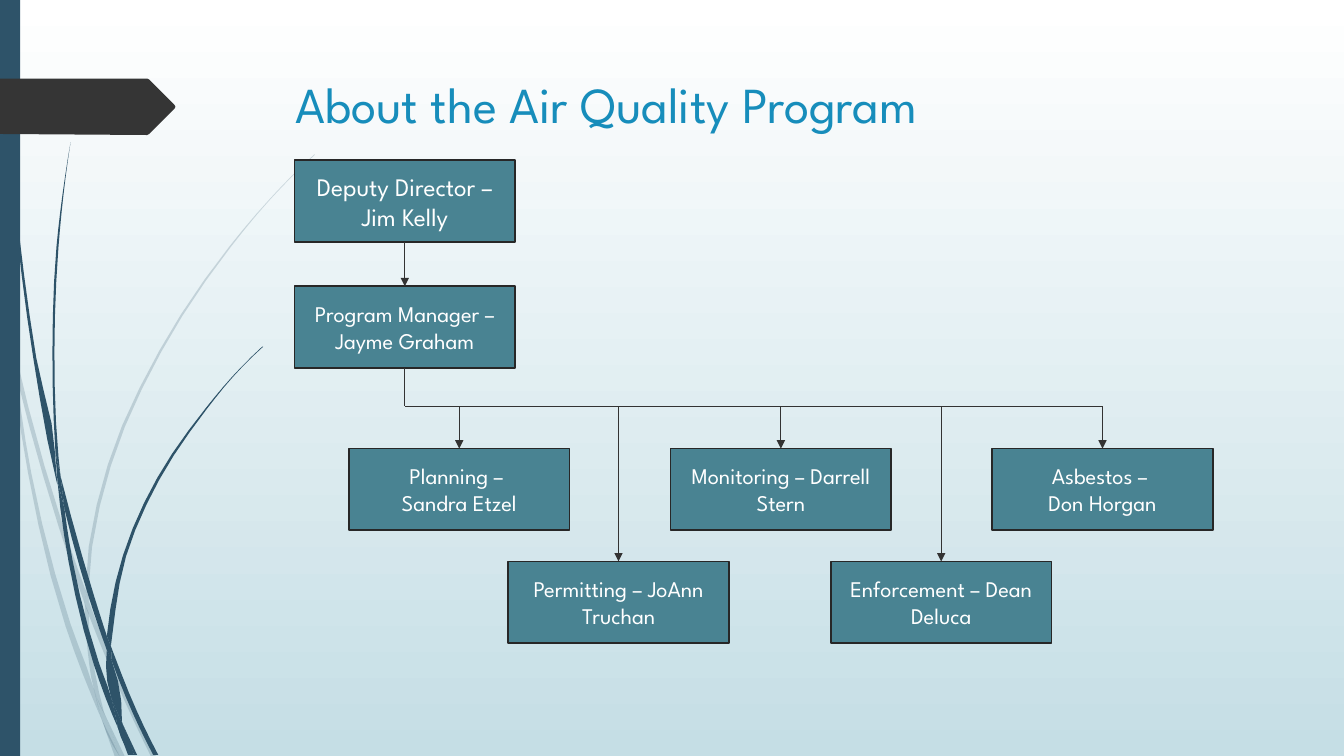
from math import dist

from lxml import etree
from pptx import Presentation
from pptx.dml.color import RGBColor
from pptx.enum.shapes import MSO_CONNECTOR, MSO_SHAPE
from pptx.enum.text import MSO_ANCHOR, PP_ALIGN
from pptx.oxml.ns import qn
from pptx.util import Inches, Pt

RECTANGLE = MSO_SHAPE.RECTANGLE
STRAIGHT = MSO_CONNECTOR.STRAIGHT
LEFT, CENTER = PP_ALIGN.LEFT, PP_ALIGN.CENTER
TOP, MIDDLE = MSO_ANCHOR.TOP, MSO_ANCHOR.MIDDLE
BOTTOM_SIDE, TOP_SIDE = 2, 0

FONT = "League Spartan"
NAVY, TEAL, BLUE = "2E5369", "498392", "178DBB"
CHARCOAL, OUTLINE, ARROW, WHITE = "353535", "272727", "333333", "FFFFFF"


def color(value):
    return RGBColor.from_string(value)


def write(shape, text, size=16, fill=WHITE, align=CENTER, anchor=MIDDLE):
    """Each line of the text becomes a paragraph."""
    frame = shape.text_frame
    frame.word_wrap = True
    frame.vertical_anchor = anchor
    for i, line in enumerate(text.split("\n")):
        paragraph = frame.add_paragraph() if i else frame.paragraphs[0]
        paragraph.alignment = align
        run = paragraph.add_run()
        run.text = line
        run.font.name = FONT
        run.font.size = Pt(size)
        run.font.color.rgb = color(fill)


def parabola(a, b, c, t):
    """Point at distance t from b on the parabola through a, b and c."""
    u, w = -dist(a, b), dist(b, c)
    return [p * t * (t - w) / (u * (u - w)) + q * (t - u) * (t - w) / (u * w)
            + r * t * (t - u) / (w * (w - u)) for p, q, r in zip(a, b, c)]


def smooth_curve(knots, steps=3):
    """Blend the parabolas on both sides of every stretch between knots."""
    if len(knots) < 3:
        return knots
    points = []
    last = len(knots) - 2
    for i, (start, end) in enumerate(zip(knots, knots[1:])):
        length = dist(start, end)
        for step in range(steps):
            share = step / steps
            t = share * length
            before = parabola(*knots[i - 1:i + 2], t) if i else None
            after = parabola(*knots[i:i + 3], t - length) if i < last else before
            before = before or after
            points.append([p + (q - p) * share for p, q in zip(before, after)])
    return points + [knots[-1]]


class OrgSlide:
    def __init__(self, slide):
        self.slide = slide
        self.shapes = slide.shapes

    def background(self, start, end):
        fill = self.slide.background.fill
        fill.gradient()
        fill.gradient_angle = 270
        for stop, position, value in zip(fill.gradient_stops, (0, 1), (start, end)):
            stop.position = position
            stop.color.rgb = color(value)

    def paint(self, shape, fill, line=None, opacity=100):
        shape.shadow.inherit = False
        shape.fill.solid()
        shape.fill.fore_color.rgb = color(fill)
        if opacity < 100:
            rgb = next(shape.element.spPr.iter(qn("a:srgbClr")))
            etree.SubElement(rgb, qn("a:alpha"), val=str(opacity * 1000))
        if line:
            shape.line.color.rgb = color(line)
            shape.line.width = Pt(1.25)
        else:
            shape.line.fill.background()
        return shape

    def rectangle(self, x, y, width, height, fill, line=None):
        shape = self.shapes.add_shape(
            RECTANGLE, Inches(x), Inches(y), Inches(width), Inches(height))
        return self.paint(shape, fill, line)

    def outline(self, points, fill, opacity=100):
        start, *rest = [(Inches(x), Inches(y)) for x, y in points]
        builder = self.shapes.build_freeform(*start)
        builder.add_line_segments(rest, close=True)
        return self.paint(builder.convert_to_shape(), fill, opacity=opacity)

    def title(self, text):
        box = self.shapes.add_textbox(
            Inches(2.83), Inches(0.68), Inches(9.75), Inches(1.4))
        write(box, text, size=36, fill=BLUE, align=LEFT, anchor=TOP)

    def role(self, x, y, text, size=16):
        box = self.rectangle(x, y, BOX_WIDTH, BOX_HEIGHT, TEAL, OUTLINE)
        write(box, text, size=size)
        return box

    def connector(self, start, end, source=None, target=None, arrow=True):
        line = self.shapes.add_connector(STRAIGHT, *(Inches(v) for v in start + end))
        if source:
            line.begin_connect(source, BOTTOM_SIDE)
        if target:
            line.end_connect(target, TOP_SIDE)
        line.line.color.rgb = color(ARROW)
        line.line.width = Pt(0.75)
        if arrow:
            etree.SubElement(line.line._get_or_add_ln(), qn("a:tailEnd"), type="triangle")
        etree.SubElement(line.element.spPr, qn("a:effectLst"))


# Grass blades in sections: one edge out, the other edge back
FAINT_BLADES = [
    ([(0, 2.82), (0.09, 3.22), (0.11, 3.5)], [(0.1, 3.44), (0, 2.99)]),
    ([(0.14, 3.45), (0.62, 5.2), (0.85, 5.86)], [(0.84, 5.99), (0.58, 5.22), (0.17, 3.76)]),
    ([(0.88, 5.96), (0.92, 6.07), (1.27, 6.92), (1.55, 7.51)],
     [(1.5, 7.51), (1.23, 6.94), (0.88, 6.1)]),
    ([(1.05, 7.11), (1.24, 7.51)], [(1.19, 7.51)]),
    ([(0.11, 3.5), (0.28, 4.7), (0.65, 6.21), (0.92, 6.93), (1.01, 7.14)],
     [(0.99, 7.07), (0.93, 6.83), (0.7, 6.19), (0.31, 4.69), (0.17, 3.76)]),
    ([(0.84, 5.99), (0.87, 6.46), (0.93, 6.83), (0.96, 6.92), (1.05, 7.11)],
     [(1.03, 7.06), (0.91, 6.46), (0.88, 6.1), (0.88, 6.08)]),
    ([(3.12, 1.53), (2.89, 1.75), (2.68, 1.97), (2.28, 2.44), (1.58, 3.48),
      (1.07, 4.61), (0.85, 5.84), (0.85, 5.86)],
     [(0.88, 5.96), (0.88, 5.84), (1.1, 4.62), (1.6, 3.49), (2.29, 2.45),
      (2.68, 1.98), (2.9, 1.75), (3.12, 1.54)]),
    ([(1.01, 7.14), (1.14, 7.51)], [(1.19, 7.51)]),
    ([(0.85, 5.86), (0.88, 5.96)], [(0.88, 6.1), (0.84, 5.99)]),
    ([(0.93, 6.83), (0.99, 7.07), (1.01, 7.14), (1.19, 7.51)], [(1.05, 7.11), (0.96, 6.92)]),
]
DARK_BLADES = [
    ([(0.03, 0), (0.04, 0.48), (0.07, 1.1), (0.17, 2.33), (0.33, 3.55),
      (0.56, 4.77), (0.57, 4.81)],
     [(0.55, 4.57), (0.55, 4.53), (0.36, 3.55), (0.19, 2.32), (0.08, 1.09),
      (0.05, 0.48), (0.04, 0)]),
    ([(0.6, 4.72), (0.93, 5.9), (1.06, 6.31)], [(1.06, 6.45), (0.88, 5.92), (0.64, 5.05)]),
    ([(1.1, 6.41), (1.13, 6.49), (1.36, 7.06), (1.57, 7.49)],
     [(1.52, 7.49), (1.32, 7.08), (1.11, 6.56)]),
    ([(0.57, 4.77), (0.68, 5.57), (0.93, 6.59), (1.11, 7.08), (1.17, 7.22)],
     [(1.16, 7.17), (1.1, 6.91), (0.98, 6.57), (0.72, 5.56), (0.64, 5.05)]),
    ([(0.7, 1.41), (0.62, 1.93), (0.56, 2.45), (0.52, 3.49), (0.55, 4.49)],
     [(0.6, 4.72), (0.58, 4.53), (0.54, 3.49), (0.58, 2.45), (0.63, 1.93), (0.7, 1.41)]),
    ([(1.22, 7.19), (1.36, 7.49)], [(1.33, 7.49)]),
    ([(0.55, 4.49), (0.6, 4.72)], [(0.64, 5.05), (0.57, 4.77)]),
    ([(2.6, 3.44), (2.31, 3.73), (2.04, 4.05), (1.56, 4.74), (1.22, 5.51), (1.06, 6.31)],
     [(1.1, 6.41), (1.11, 6.33), (1.25, 5.52), (1.58, 4.76), (2.05, 4.06),
      (2.31, 3.74), (2.61, 3.44)]),
    ([(1.17, 7.22), (1.31, 7.49)], [(1.27, 7.49)]),
    ([(1.06, 6.45), (1.1, 6.91), (1.16, 7.06), (1.22, 7.19)],
     [(1.21, 7.16), (1.11, 6.56), (1.09, 6.51)]),
    ([(1.06, 6.31), (1.1, 6.41)], [(1.11, 6.56), (1.06, 6.45)]),
    ([(1.1, 6.91), (1.16, 7.17), (1.17, 7.22), (1.3, 7.49)],
     [(1.33, 7.49), (1.22, 7.19), (1.16, 7.06)]),
]
TAG = [(0, 0.78), (1.46, 0.78), (1.48, 0.79), (1.73, 1.04), (1.74, 1.06),
       (1.73, 1.08), (1.48, 1.33), (1.46, 1.34), (0, 1.33)]

# Chart layout
BOX_WIDTH, BOX_HEIGHT = 2.19, 0.81
LEAD_X, DIRECTOR_Y, MANAGER_Y, RAIL_Y = 2.92, 1.59, 2.84, 4.03
TEAM_ROWS = (4.45, 5.57)
TEAMS = [(3.46, "Planning – \nSandra Etzel"), (5.04, "Permitting – JoAnn Truchan"),
         (6.65, "Monitoring – Darrell Stern"), (8.24, "Enforcement – Dean Deluca"),
         (9.84, "Asbestos – \nDon Horgan")]


def main():
    deck = Presentation()
    deck.slide_width, deck.slide_height = Inches(13.33), Inches(7.5)
    page = OrgSlide(deck.slides.add_slide(deck.slide_layouts[6]))
    # Backdrop and title
    page.background(WHITE, "C5DEE5")
    for blades, opacity in ((FAINT_BLADES, 20), (DARK_BLADES, 100)):
        for outward, back in blades:
            page.outline(smooth_curve(outward) + smooth_curve(back), NAVY, opacity)
    page.rectangle(0, 0, 0.2, 7.5, NAVY)
    page.outline(TAG, CHARCOAL)
    page.title("About the Air Quality Program")
    # Leadership
    director = page.role(LEAD_X, DIRECTOR_Y, "Deputy Director – Jim Kelly", size=18)
    manager = page.role(LEAD_X, MANAGER_Y, "Program Manager – Jayme Graham")
    lead_center = LEAD_X + BOX_WIDTH / 2
    page.connector((lead_center, DIRECTOR_Y + BOX_HEIGHT), (lead_center, MANAGER_Y),
                   director, manager)
    page.connector((lead_center, MANAGER_Y + BOX_HEIGHT), (lead_center, RAIL_Y),
                   manager, arrow=False)
    # Teams in two alternating rows, hung from one rail
    for i, (x, team) in enumerate(TEAMS):
        y = TEAM_ROWS[i % 2]
        team_box = page.role(x, y, team)
        team_center = x + BOX_WIDTH / 2
        page.connector((team_center, RAIL_Y), (team_center, y), target=team_box)
    page.connector((lead_center, RAIL_Y), (team_center, RAIL_Y), arrow=False)
    deck.save("out.pptx")


if __name__ == "__main__":
    main()
